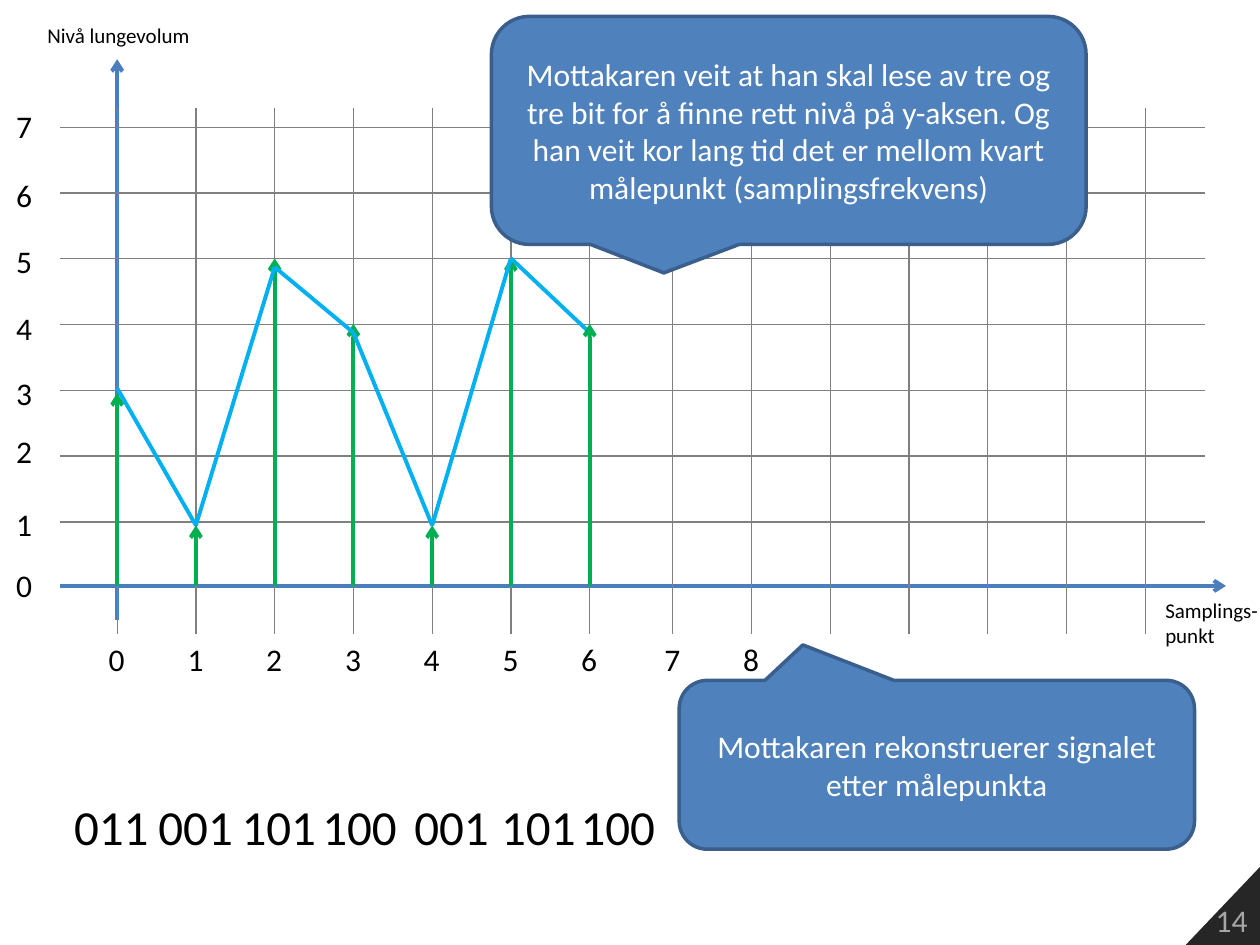
from dataclasses import dataclass
from itertools import pairwise
from typing import NamedTuple

from lxml.etree import SubElement
from pptx import Presentation
from pptx.dml.color import RGBColor
from pptx.enum.shapes import MSO_CONNECTOR, MSO_SHAPE
from pptx.enum.text import MSO_ANCHOR, PP_ALIGN
from pptx.oxml.ns import qn
from pptx.util import Inches, Pt


@dataclass(frozen=True)
class Theme:
    font: str = "Calibri"
    text: str = "000000"
    axis: str = "4B7EBC"
    grid: str = "808080"
    sample: str = "00B050"
    signal: str = "00B0F0"
    callout_fill: str = "4F81BD"
    callout_line: str = "3A5F8C"
    callout_text: str = "FFFFFF"
    corner: str = "262626"
    page_number: str = "A6A6A6"
    small: int = 12
    body: int = 18
    code: int = 28
    thin: float = 0.75
    outline: float = 2
    thick: float = 2.25


class Point(NamedTuple):
    x: float
    y: float


class Box(NamedTuple):
    left: float
    top: float
    width: float
    height: float

    def lengths(self):
        return [Inches(value) for value in self]


class Sample(NamedTuple):
    arrow_top: float
    signal_y: float
    code: str
    code_left: float


class Callout(NamedTuple):
    box: Box
    tip: Point
    text: str


THEME = Theme()
ORIGIN = Point(0.93, 4.65)
COLUMN_STEP = 0.625
ROW_STEP = 0.522
GRID_TOP, GRID_BOTTOM = 0.86, 5.03
GRID_LEFT, GRID_RIGHT = 0.48, 9.56
FIRST_ROW = 1.01
SECOND_BLOCK = 5.34  # columns 7 to 13 start here, after a slightly wider gap
COLUMNS = [start + COLUMN_STEP * index
           for start in (ORIGIN.x, SECOND_BLOCK) for index in range(7)]
LEVEL_TOPS = [4.44, 3.96, 3.38, 2.92, 2.4, 1.87, 1.35, 0.8]
SAMPLES = [
    Sample(3.12, 3.08, "011", 0.49),
    Sample(4.17, 4.17, "001", 1.16),
    Sample(2.05, 2.12, "101", 1.82),
    Sample(2.57, 2.64, "100", 2.46),
    Sample(4.17, 4.17, "001", 3.19),
    Sample(2.05, 2.05, "101", 3.88),
    Sample(2.57, 2.64, "100", 4.51),
]
CALLOUTS = [
    Callout(Box(3.9, 0.13, 4.72, 1.81), Point(-0.21, 0.625),
            "Mottakaren veit at han skal lese av tre og tre bit for å finne rett "
            "nivå på y-aksen. Og han veit kor lang tid det er mellom kvart "
            "målepunkt (samplingsfrekvens)"),
    Callout(Box(5.39, 5.4, 4.09, 1.34), Point(-0.26, -0.71),
            "Mottakaren rekonstruerer signalet etter målepunkta"),
]


def write(text_frame, text: str, size: int, color: str, align=PP_ALIGN.LEFT) -> None:
    text_frame.text = text
    for paragraph in text_frame.paragraphs:
        paragraph.alignment = align
        for run in paragraph.runs:
            run.font.name = THEME.font
            run.font.size = Pt(size)
            run.font.color.rgb = RGBColor.from_string(color)


def add_line(slide, start: Point, end: Point, color: str,
             width: float = THEME.thick, arrow: bool = False) -> None:
    connector = slide.shapes.add_connector(
        MSO_CONNECTOR.STRAIGHT, Inches(start.x), Inches(start.y),
        Inches(end.x), Inches(end.y))
    connector.line.color.rgb = RGBColor.from_string(color)
    connector.line.width = Pt(width)
    if arrow:
        SubElement(connector.line._get_or_add_ln(), qn("a:tailEnd"), type="arrow")
    SubElement(connector._element.spPr, qn("a:effectLst"))


def add_label(slide, box: Box, text: str, size: int, align=PP_ALIGN.LEFT) -> None:
    text_box = slide.shapes.add_textbox(*box.lengths())
    text_box.text_frame.word_wrap = False
    write(text_box.text_frame, text, size, THEME.text, align)


def add_callout(slide, callout: Callout) -> None:
    shape = slide.shapes.add_shape(
        MSO_SHAPE.ROUNDED_RECTANGULAR_CALLOUT, *callout.box.lengths())
    shape.adjustments[0], shape.adjustments[1] = callout.tip
    shape.shadow.inherit = False
    shape.fill.solid()
    shape.fill.fore_color.rgb = RGBColor.from_string(THEME.callout_fill)
    shape.line.color.rgb = RGBColor.from_string(THEME.callout_line)
    shape.line.width = Pt(THEME.outline)
    shape.text_frame.word_wrap = True
    shape.text_frame.vertical_anchor = MSO_ANCHOR.MIDDLE
    write(shape.text_frame, callout.text, THEME.body, THEME.callout_text, PP_ALIGN.CENTER)


def add_page_corner(slide, number: str) -> None:
    builder = slide.shapes.build_freeform(Inches(9.41), Inches(7.5))
    builder.add_line_segments(
        [(Inches(10), Inches(6.88)), (Inches(10), Inches(7.5))], close=True)
    shape = builder.convert_to_shape()
    shape.shadow.inherit = False
    shape.fill.solid()
    shape.fill.fore_color.rgb = RGBColor.from_string(THEME.corner)
    shape.line.fill.background()
    shape.text_frame.vertical_anchor = MSO_ANCHOR.BOTTOM
    write(shape.text_frame, number, THEME.body, THEME.page_number, PP_ALIGN.RIGHT)


def add_sample_arrow(slide, x: float, sample: Sample) -> None:
    add_line(slide, Point(x, ORIGIN.y), Point(x, sample.arrow_top), THEME.sample, arrow=True)


def main() -> None:
    presentation = Presentation()
    presentation.slide_width, presentation.slide_height = Inches(10), Inches(7.5)
    slide = presentation.slides.add_slide(presentation.slide_layouts[6])
    add_page_corner(slide, "14")

    # Axes
    add_line(slide, Point(GRID_LEFT, ORIGIN.y), Point(9.73, ORIGIN.y), THEME.axis, arrow=True)
    add_line(slide, Point(ORIGIN.x, 4.92), Point(ORIGIN.x, 0.47), THEME.axis, arrow=True)

    # Grid
    for row in range(7):
        y = FIRST_ROW + ROW_STEP * row
        add_line(slide, Point(GRID_LEFT, y), Point(GRID_RIGHT, y), THEME.grid, THEME.thin)
    for x in COLUMNS:
        add_line(slide, Point(x, GRID_TOP), Point(x, GRID_BOTTOM), THEME.grid, THEME.thin)

    # Axis numbers and titles
    for level, top in enumerate(LEVEL_TOPS):
        add_label(slide, Box(0.03, top, 0.33, 0.4), str(level), THEME.body)
    for index, x in enumerate(COLUMNS[:9]):
        add_label(slide, Box(x - 0.165, GRID_BOTTOM, 0.33, 0.4), str(index), THEME.body)
    add_label(slide, Box(9.15, 4.69, 0.94, 0.5), "Samplings-\npunkt", THEME.small)
    add_label(slide, Box(0.27, 0.13, 1.34, 0.3), "Nivå lungevolum", THEME.small,
              PP_ALIGN.CENTER)

    # Samples and rebuilt signal; the last arrow lies on top of the signal
    placed = list(zip(COLUMNS, SAMPLES))
    for x, sample in placed[:-1]:
        add_sample_arrow(slide, x, sample)
    for start, end in pairwise(Point(x, sample.signal_y) for x, sample in placed):
        add_line(slide, start, end, THEME.signal)
    add_sample_arrow(slide, *placed[-1])

    # Bit codes
    for sample in SAMPLES:
        add_label(slide, Box(sample.code_left, 6.27, 0.8, 0.57), sample.code, THEME.code)

    # Callouts
    for callout in CALLOUTS:
        add_callout(slide, callout)

    presentation.save("out.pptx")


if __name__ == "__main__":
    main()
